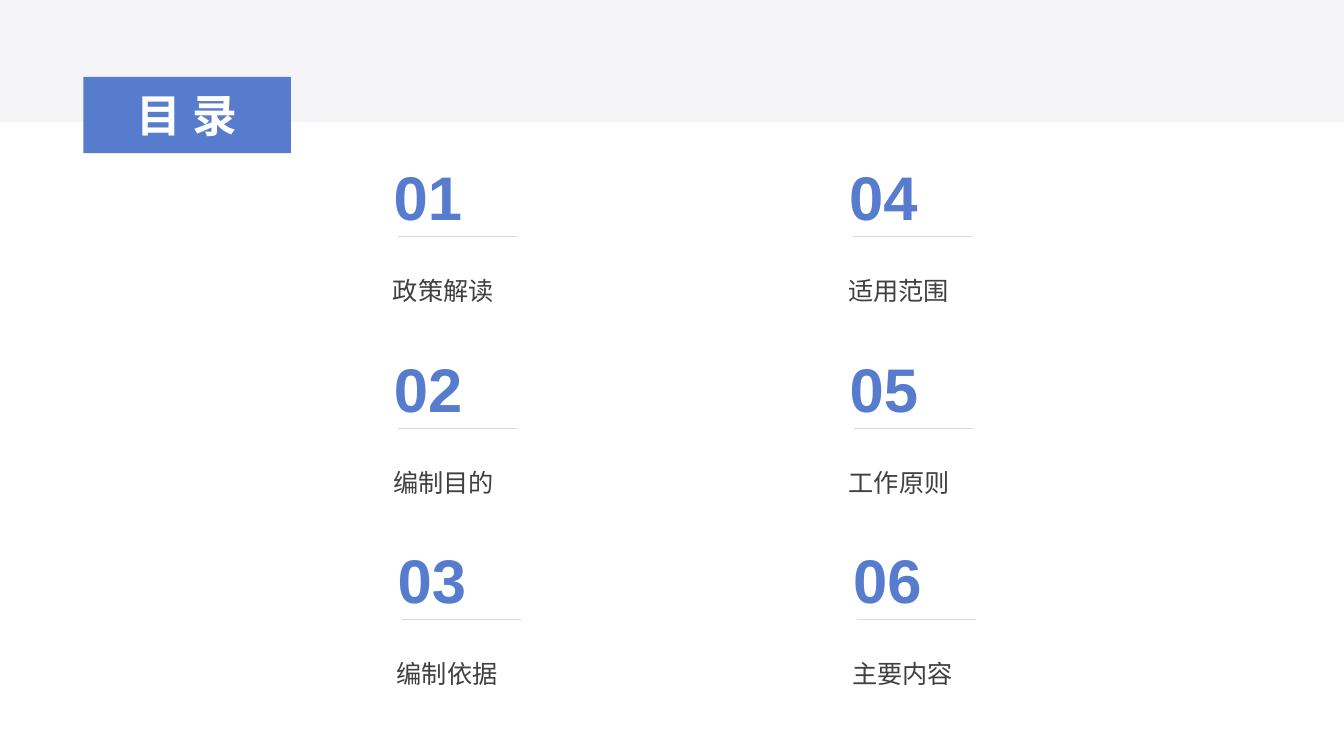
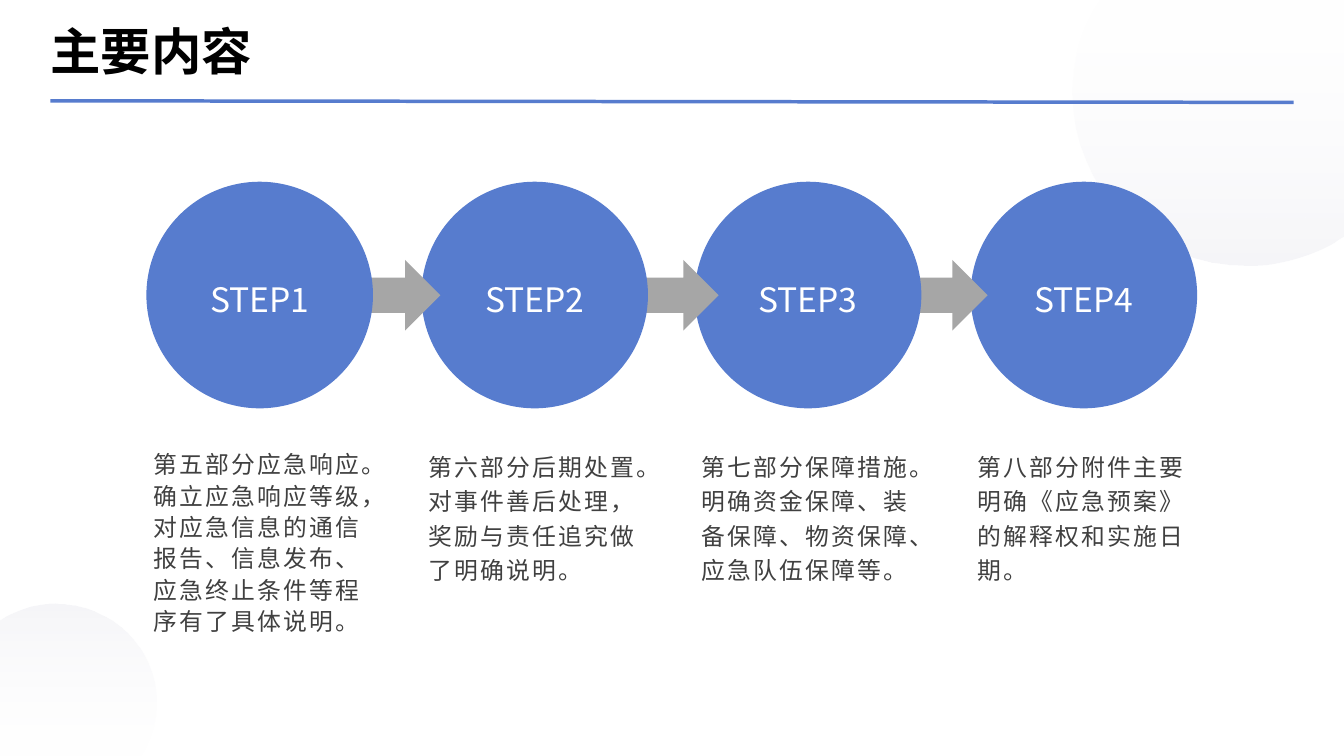
from pptx import Presentation
from pptx.dml.color import RGBColor
from pptx.enum.shapes import MSO_CONNECTOR, MSO_SHAPE
from pptx.enum.text import MSO_ANCHOR, PP_ALIGN
from pptx.oxml.ns import qn
from pptx.oxml.xmlchemy import OxmlElement
from pptx.util import Cm, Pt

BLUE = RGBColor(0x57, 0x7C, 0xCE)
BAND = RGBColor(0xF5, 0xF5, 0xF8)
RULE = RGBColor(0xD9, 0xD9, 0xD9)
GREY = RGBColor(0xA6, 0xA6, 0xA6)
INK = RGBColor(0x40, 0x40, 0x40)
HAZE = RGBColor(0xD8, 0xD8, 0xE4)
WHITE = RGBColor(0xFF, 0xFF, 0xFF)
BLACK = RGBColor(0x00, 0x00, 0x00)

WIDE, HIGH = 33.87, 19.05
LATIN, HAN = "Arial", "Noto Sans CJK SC"

# Text styles: font, paragraph and frame values, plus colour and spacing
STYLES = {
    "tag": {
        "font": {"name": LATIN, "size": Pt(32), "bold": True},
        "para": {"alignment": PP_ALIGN.CENTER},
        "frame": {"vertical_anchor": MSO_ANCHOR.MIDDLE},
        "ink": WHITE, "gap": 8,
    },
    "number": {
        "font": {"name": LATIN, "size": Pt(44), "bold": True},
        "para": {"alignment": PP_ALIGN.LEFT},
        "frame": {"margin_right": Cm(0)},
        "ink": BLUE,
    },
    "label": {
        "font": {"name": LATIN, "size": Pt(18)},
        "para": {"alignment": PP_ALIGN.JUSTIFY, "line_spacing": 1.5,
                 "space_after": Pt(20)},
        "frame": {}, "ink": INK,
    },
    "title": {
        "font": {"name": HAN, "size": Pt(36), "bold": True},
        "para": {"alignment": PP_ALIGN.LEFT},
        "frame": {"vertical_anchor": MSO_ANCHOR.MIDDLE,
                  "margin_left": 0, "margin_right": 0,
                  "margin_top": 0, "margin_bottom": 0},
        "ink": BLACK,
    },
    "step": {
        "font": {"name": HAN, "size": Pt(24)},
        "para": {"alignment": PP_ALIGN.CENTER, "line_spacing": 1.2},
        "frame": {"vertical_anchor": MSO_ANCHOR.MIDDLE},
        "ink": WHITE,
    },
    "body": {
        "font": {"name": HAN, "size": Pt(17)},
        "para": {"alignment": PP_ALIGN.LEFT, "space_after": Pt(10)},
        "frame": {}, "ink": INK, "gap": 1.5,
    },
}

TOPICS = ["政策解读", "编制目的", "编制依据", "适用范围", "工作原则", "主要内容"]

# Left edges of circle and of the arrow before it, text, line spacing
STEPS = [
    (3.69, None, "第五部分应急响应。确立应急响应等级，对应急信息的通信报告、"
     "信息发布、应急终止条件等程序有了具体说明。", 1.1),
    (10.62, 9.04, "第六部分后期处置。对事件善后处理，"
     "奖励与责任追究做了明确说明。", 1.2),
    (17.51, 16.05, "第七部分保障措施。明确资金保障、装备保障、"
     "物资保障、应急队伍保障等。", 1.2),
    (24.46, 22.83, "第八部分附件主要明确《应急预案》的解释权和实施日期。", 1.2),
]

# Corner discs: four straight corners, then three curves of three points
UPPER = [(27.74, 0), (WIDE, 0), (WIDE, 5.94), (33.53, 6.15),
         (32.89, 6.48), (32.18, 6.68), (31.42, 6.68),
         (28.98, 6.68), (27.03, 4.75), (27.03, 2.34),
         (27.03, 1.6), (27.2, 0.89), (27.56, 0.28)]
LOWER = [(3.53, HIGH), (0, HIGH), (0, 15.65), (0.2, 15.52),
         (0.56, 15.34), (0.97, 15.21), (1.4, 15.21),
         (2.79, 15.21), (3.94, 16.33), (3.94, 17.7),
         (3.94, 18.14), (3.81, 18.52), (3.63, 18.9)]


def apply(item, values):
    for name, value in values.items():
        setattr(item, name, value)


def write(shape, text, style):
    look = STYLES[style]
    frame = shape.text_frame
    frame.word_wrap = True
    apply(frame, look["frame"])
    para = frame.paragraphs[0]
    apply(para, look["para"])
    run = para.add_run()
    run.text = text
    apply(run.font, look["font"])
    run.font.color.rgb = look["ink"]
    props = run.font._element
    props.set("lang", "zh-CN")
    if "gap" in look:
        props.set("spc", str(int(look["gap"] * 100)))
    east = OxmlElement("a:ea")
    east.set("typeface", HAN)
    props.append(east)
    return para


def label(slide, box, text, style):
    shape = slide.shapes.add_textbox(*map(Cm, box))
    return write(shape, text, style)


def block(slide, kind, box, fill):
    shape = slide.shapes.add_shape(kind, *map(Cm, box))
    shape.shadow.inherit = False
    shape.fill.solid()
    shape.fill.fore_color.rgb = fill
    shape.line.fill.background()
    return shape


def rule(slide, ends, color, width):
    line = slide.shapes.add_connector(MSO_CONNECTOR.STRAIGHT, *map(Cm, ends))
    line.line.color.rgb = color
    line.line.width = Pt(width)
    line.element.spPr.append(OxmlElement("a:effectLst"))


def bend(shape):
    """Turn the lines after the corners into curves, three points each."""
    lines = list(shape.element.spPr.iter(qn("a:lnTo")))[3:]
    for i in range(0, len(lines), 3):
        curve = OxmlElement("a:cubicBezTo")
        lines[i].addprevious(curve)
        for line in lines[i:i + 3]:
            curve.append(line[0])
            line.getparent().remove(line)


def disc(slide, points, angle):
    """Pale gradient disc, cut off at the slide edges."""
    spots = [(Cm(x), Cm(y)) for x, y in points]
    outline = slide.shapes.build_freeform(*spots[0])
    outline.add_line_segments(spots[1:], close=True)
    shape = outline.convert_to_shape()
    bend(shape)
    shape.shadow.inherit = False
    shape.line.fill.background()
    shape.fill.gradient()
    shape.fill.gradient_angle = angle
    stops = zip(shape.fill.gradient_stops, (0, 1), (WHITE, HAZE))
    for stop, place, color in stops:
        stop.position = place
        stop.color.rgb = color
    tints = shape.element.spPr.iter(qn("a:srgbClr"))
    for tint, share in zip(tints, (10, 24)):
        alpha = OxmlElement("a:alpha")
        alpha.set("val", str(share * 1000))
        tint.append(alpha)


def topic(slide, x, y, number, text):
    """Number, thin rule and label, from the top left corner of the cell."""
    label(slide, (x, y + 2.54, 9, 1.7), text, "label")
    label(slide, (x + 0.02, y, 2.26, 2.13), f"{number:02}", "number")
    rule(slide, (x + 3.37, y + 2.07, x + 0.37, y + 2.07), RULE, 0.5)


def agenda(slide):
    # Top band
    block(slide, MSO_SHAPE.RECTANGLE, (0, 0, WIDE, 3.07), BAND)
    # Two columns of three topics, each row with its top and indent
    rows = ((3.89, 0), (8.72, 0.01), (13.54, 0.1))
    for i, text in enumerate(TOPICS):
        col, row = divmod(i, len(rows))
        top, indent = rows[row]
        topic(slide, 9.65 + col * 11.48 + indent, top, i + 1, text)
    # Heading tag
    tag = block(slide, MSO_SHAPE.RECTANGLE, (2.1, 1.94, 5.23, 1.92), BLUE)
    write(tag, "目录", "tag")


def heading(slide, text):
    disc(slide, UPPER, 270)
    disc(slide, LOWER, 90)
    rule(slide, (1.27, 2.54, 32.6, 2.58), BLUE, 2.5)
    label(slide, (1.27, 0.43, 31.32, 1.7), text, "title")


def process(slide, y):
    """Row of circles, drawn from the right so arrows tuck under the left."""
    size = 5.71
    for i, (left, start, _, _) in reversed(list(enumerate(STEPS, 1))):
        circle = block(slide, MSO_SHAPE.OVAL, (left, y, size, size), BLUE)
        write(circle, f"STEP{i}", "step")
        if start:
            box = (start, y + 1.97, 2.06, 1.78)
            block(slide, MSO_SHAPE.RIGHT_ARROW, box, GREY)
    for left, _, text, space in STEPS:
        box = (left - 0.07, y + 6.56, 5.84, 5.89)
        label(slide, box, text, "body").line_spacing = space


def main():
    deck = Presentation()
    deck.slide_width, deck.slide_height = Cm(WIDE), Cm(HIGH)
    blank = deck.slide_layouts[6]
    agenda(deck.slides.add_slide(blank))
    steps = deck.slides.add_slide(blank)
    heading(steps, "主要内容")
    process(steps, 4.58)
    deck.save("out.pptx")


if __name__ == "__main__":
    main()
